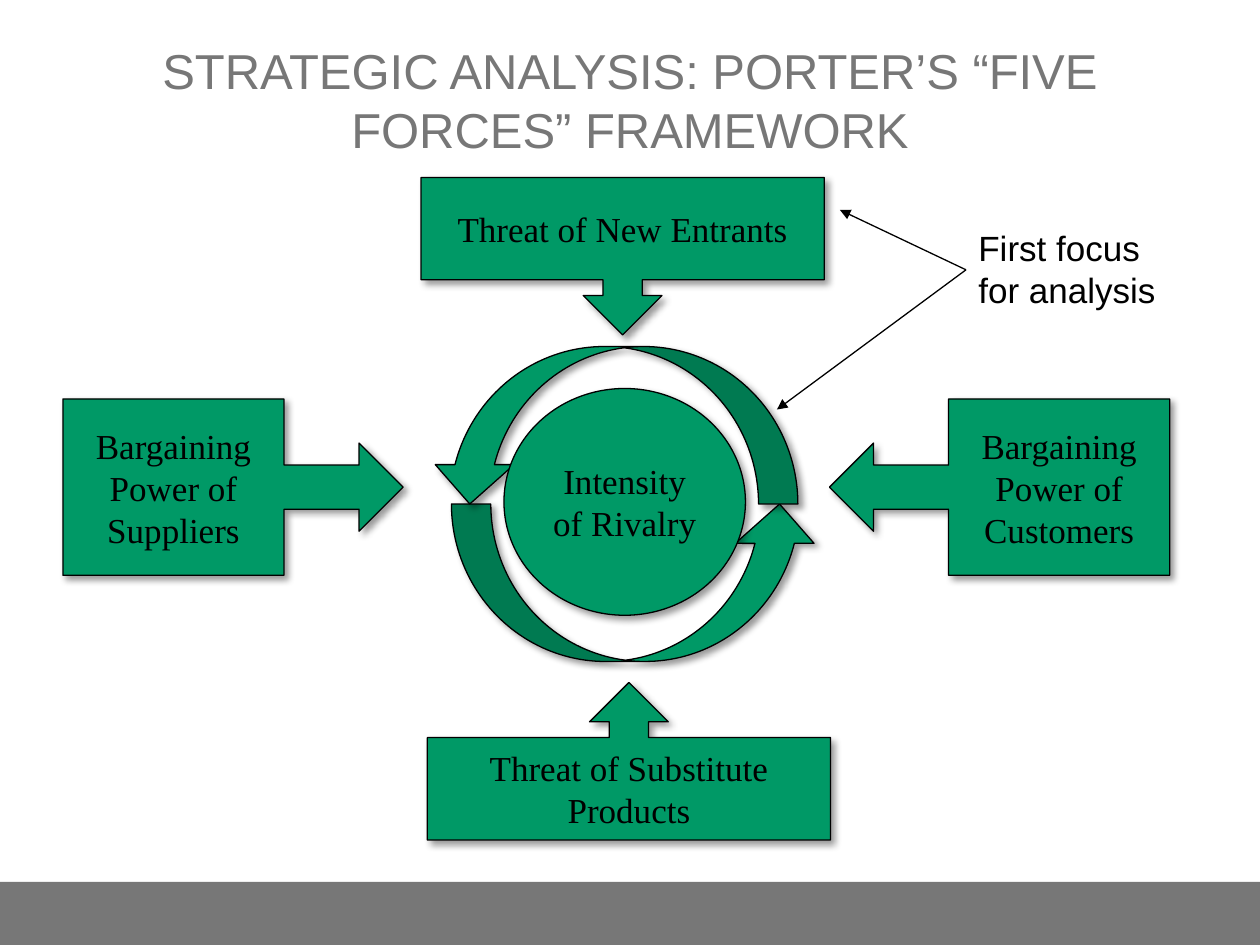
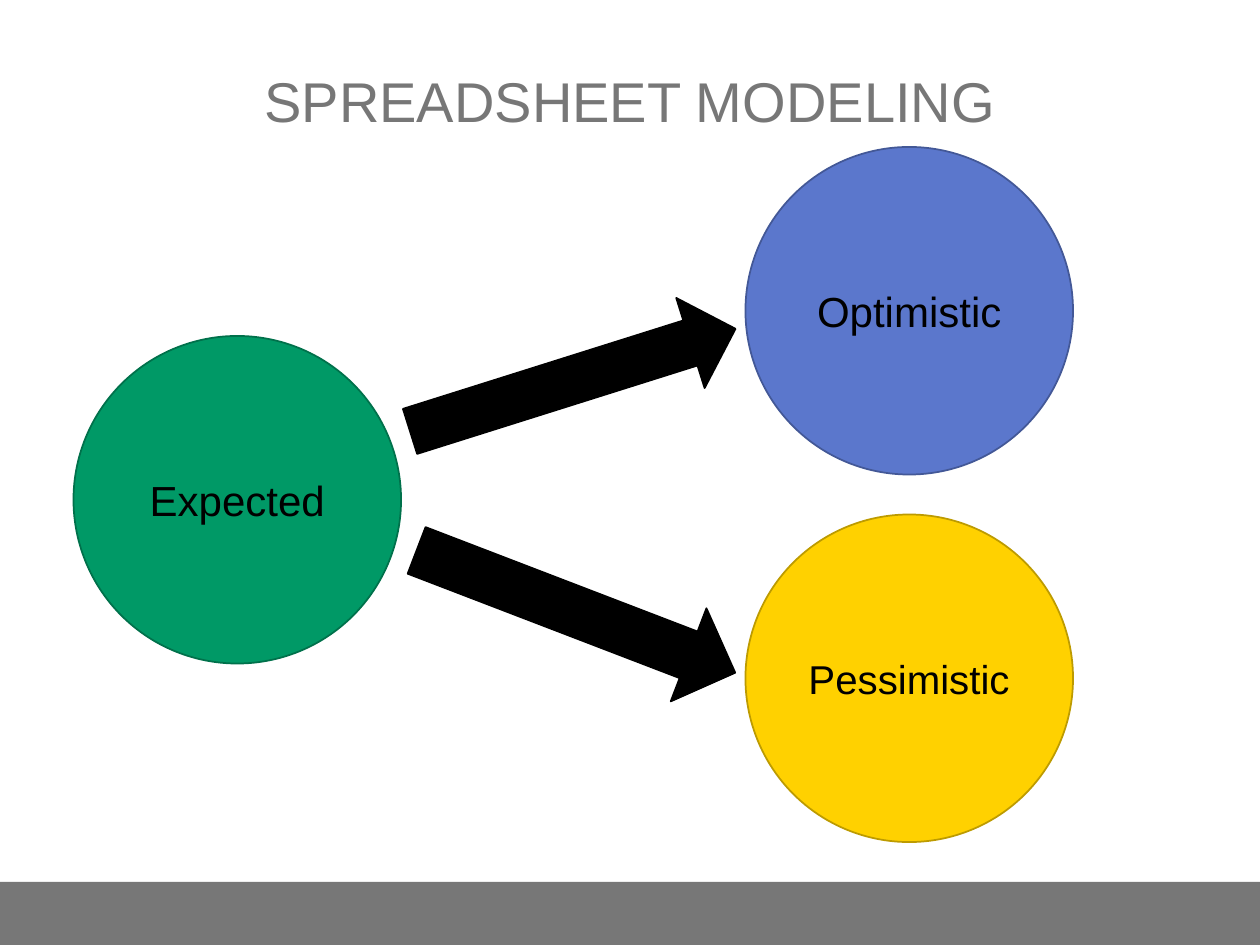
from typing import NamedTuple, Optional

from lxml import etree
from pptx import Presentation
from pptx.dml.color import RGBColor
from pptx.enum.shapes import MSO_CONNECTOR, MSO_SHAPE
from pptx.enum.text import MSO_ANCHOR, PP_ALIGN
from pptx.oxml.ns import qn
from pptx.util import Emu, Inches, Pt

STRAIGHT = MSO_CONNECTOR.STRAIGHT
RECTANGLE, OVAL, RIGHT_ARROW = MSO_SHAPE.RECTANGLE, MSO_SHAPE.OVAL, MSO_SHAPE.RIGHT_ARROW
CURVED_UP, CURVED_DOWN = MSO_SHAPE.CURVED_UP_ARROW, MSO_SHAPE.CURVED_DOWN_ARROW
LEFT_CALLOUT, RIGHT_CALLOUT = MSO_SHAPE.LEFT_ARROW_CALLOUT, MSO_SHAPE.RIGHT_ARROW_CALLOUT
UP_CALLOUT, DOWN_CALLOUT = MSO_SHAPE.UP_ARROW_CALLOUT, MSO_SHAPE.DOWN_ARROW_CALLOUT
MIDDLE, TOP = MSO_ANCHOR.MIDDLE, MSO_ANCHOR.TOP
CENTER, LEFT = PP_ALIGN.CENTER, PP_ALIGN.LEFT

SLIDE_WIDTH, SLIDE_HEIGHT = Inches(10), Inches(7.5)
COLUMNS, ROWS = 120, 90
TITLE_ONLY = 5


class Theme(NamedTuple):
    gray: str = "777777"
    green: str = "009966"
    blue: str = "5B77CC"
    yellow: str = "FFD100"
    black: str = "000000"
    green_edge: str = "00714B"
    blue_edge: str = "435897"
    yellow_edge: str = "BD9B00"
    sans: str = "Arial"
    serif: str = "Times New Roman"
    force_size: int = 20
    scenario_size: int = 24
    thin: float = 0.75
    medium: float = 1


THEME = Theme()


class Area(NamedTuple):
    """Left, top, width and height in grid columns and rows."""
    column: float
    row: float
    columns: float
    rows: float


class Force(NamedTuple):
    kind: MSO_SHAPE
    area: Area
    label: str = ""
    mirrored: bool = False


class Scenario(NamedTuple):
    label: str
    column: float
    row: float
    fill: str
    edge: str
    size: int = THEME.scenario_size


class ScenarioArrow(NamedTuple):
    area: Area
    rotation: float


BAND = Area(0, 84, COLUMNS, 6)
TITLE = Area(5, 2, 110, 15)

FORCES = (
    Force(CURVED_UP, Area(43, 48, 35, 15)),
    Force(CURVED_DOWN, Area(41, 33, 35, 15), mirrored=True),
    Force(OVAL, Area(48, 37, 23, 21.6), "Intensity of Rivalry"),
    Force(LEFT_CALLOUT, Area(79, 38, 32.4, 16.8), "Bargaining Power of Customers"),
    Force(DOWN_CALLOUT, Area(40.1, 16.9, 38.4, 15), "Threat of New Entrants"),
    Force(UP_CALLOUT, Area(40.7, 65, 38.4, 15), "Threat of Substitute Products"),
    Force(RIGHT_CALLOUT, Area(6, 38, 32.4, 16.8), "Bargaining Power of Suppliers"),
)
FOCUS_NOTE = Area(92, 21, 20, 9.2)
FOCUS_START = (92, 25.7)
FOCUS_TARGETS = ((80, 20), (74, 39))

SCENARIO_DIAMETER = 31.2
SCENARIOS = (
    Scenario("Expected", 7, 32, THEME.green, THEME.green_edge),
    Scenario("Optimistic", 71, 14, THEME.blue, THEME.blue_edge),
    Scenario("Pessimistic", 71, 49, THEME.yellow, THEME.yellow_edge, 23),
)
SCENARIO_ARROWS = (
    ScenarioArrow(Area(38.3, 31.7, 32.5, 9), 342.5),
    ScenarioArrow(Area(38.6, 53.5, 32.5, 9.5), 21),
)


def across(columns: float) -> Emu:
    return Emu(round(SLIDE_WIDTH * columns / COLUMNS))


def down(rows: float) -> Emu:
    return Emu(round(SLIDE_HEIGHT * rows / ROWS))


def place(area: Area) -> tuple:
    return across(area.column), down(area.row), across(area.columns), down(area.rows)


def write(shape, text: str, size: float, font: str = THEME.sans, color: str = THEME.black,
          align=CENTER, anchor=MIDDLE) -> None:
    frame = shape.text_frame
    frame.word_wrap = True
    frame.vertical_anchor = anchor
    paragraph = frame.paragraphs[0]
    paragraph.text = text
    paragraph.alignment = align
    paragraph.font.size = Pt(size)
    paragraph.font.name = font
    paragraph.font.color.rgb = RGBColor.from_string(color)


def add_figure(slide, kind, area: Area, fill: str, edge: Optional[str] = None,
               width: float = THEME.medium):
    shape = slide.shapes.add_shape(kind, *place(area))
    shape.fill.solid()
    shape.fill.fore_color.rgb = RGBColor.from_string(fill)
    if edge is None:
        shape.line.fill.background()
    else:
        shape.line.color.rgb = RGBColor.from_string(edge)
        shape.line.width = Pt(width)
    shape.shadow.inherit = False
    return shape


def cast_shadow(shape) -> None:
    effects = shape.element.spPr.find(qn("a:effectLst"))
    shadow = etree.SubElement(effects, qn("a:outerShdw"), blurRad=str(Pt(4)), dist=str(Pt(3)),
                              dir=str(45 * 60000), algn="tl", rotWithShape="0")
    color = etree.SubElement(shadow, qn("a:srgbClr"), val=THEME.black)
    etree.SubElement(color, qn("a:alpha"), val="40000")


def add_force(slide, force: Force) -> None:
    shape = add_figure(slide, force.kind, force.area, THEME.green, THEME.black, THEME.thin)
    cast_shadow(shape)
    if force.mirrored:
        shape.element.spPr.find(qn("a:xfrm")).set("flipH", "1")
    if force.label:
        write(shape, force.label, THEME.force_size, THEME.serif)


def add_pointer(slide, start: tuple, end: tuple) -> None:
    connector = slide.shapes.add_connector(
        STRAIGHT, across(start[0]), down(start[1]), across(end[0]), down(end[1]))
    connector.line.color.rgb = RGBColor.from_string(THEME.black)
    connector.line.width = Pt(THEME.thin)
    properties = connector.element.spPr
    etree.SubElement(properties.find(qn("a:ln")), qn("a:tailEnd"), type="triangle")
    etree.SubElement(properties, qn("a:effectLst"))


def add_titled_slide(presentation, title: str, size: float):
    """Add a slide with the bottom band and a formatted title."""
    slide = presentation.slides.add_slide(presentation.slide_layouts[TITLE_ONLY])
    add_figure(slide, RECTANGLE, BAND, THEME.gray)
    placeholder = slide.shapes.title
    placeholder.left, placeholder.top, placeholder.width, placeholder.height = place(TITLE)
    write(placeholder, title, size, color=THEME.gray)
    return slide


def build_five_forces(presentation) -> None:
    slide = add_titled_slide(
        presentation, "STRATEGIC ANALYSIS: PORTER’S “FIVE FORCES” FRAMEWORK", 28)
    for force in FORCES:
        add_force(slide, force)
    note = slide.shapes.add_textbox(*place(FOCUS_NOTE))
    write(note, "First focus for analysis", THEME.force_size, align=LEFT, anchor=TOP)
    for target in FOCUS_TARGETS:
        add_pointer(slide, FOCUS_START, target)


def build_spreadsheet_modeling(presentation) -> None:
    slide = add_titled_slide(presentation, "SPREADSHEET MODELING", 32)
    for scenario in SCENARIOS:
        area = Area(scenario.column, scenario.row, SCENARIO_DIAMETER, SCENARIO_DIAMETER)
        circle = add_figure(slide, OVAL, area, scenario.fill, scenario.edge)
        write(circle, scenario.label, scenario.size)
    for arrow in SCENARIO_ARROWS:
        shape = add_figure(slide, RIGHT_ARROW, arrow.area, THEME.black, THEME.black)
        shape.rotation = arrow.rotation


def main() -> None:
    presentation = Presentation()
    presentation.slide_width, presentation.slide_height = SLIDE_WIDTH, SLIDE_HEIGHT
    build_five_forces(presentation)
    build_spreadsheet_modeling(presentation)
    presentation.save("out.pptx")


if __name__ == "__main__":
    main()
